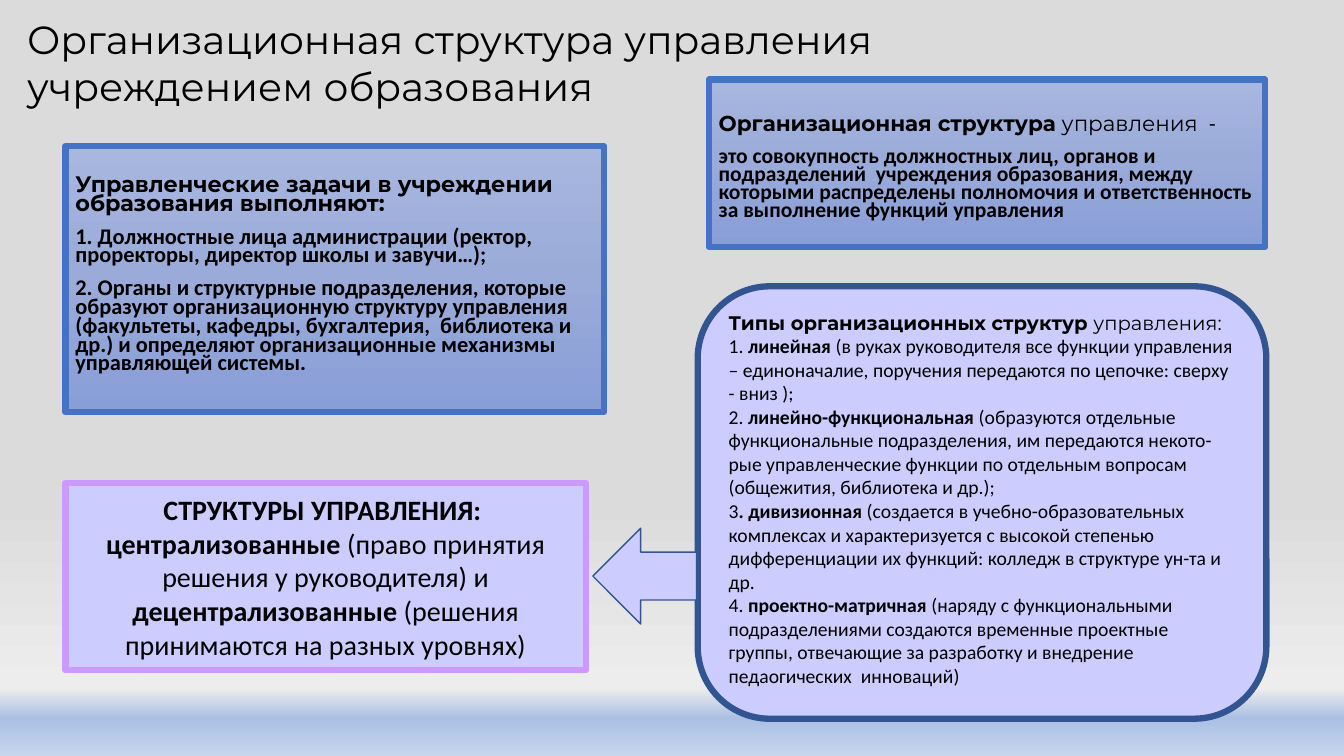
from dataclasses import dataclass
from typing import NamedTuple, Optional

from pptx import Presentation
from pptx.dml.color import RGBColor
from pptx.dml.fill import FillFormat
from pptx.enum.shapes import MSO_SHAPE as Preset
from pptx.enum.text import MSO_ANCHOR as Anchor, PP_ALIGN as Align
from pptx.oxml import parse_xml
from pptx.oxml.ns import nsdecls, qn
from pptx.oxml.xmlchemy import BaseOxmlElement as Element
from pptx.slide import Slide
from pptx.text.text import TextFrame
from pptx.util import Emu, Pt

EMU_PER_PX = 9144
HEADING_FONT = "Montserrat"
BODY_FONT = "Calibri"

BLACK = RGBColor(0x00, 0x00, 0x00)
BLUE = RGBColor(0x44, 0x72, 0xC4)
NAVY = RGBColor(0x32, 0x54, 0x91)
LAVENDER = RGBColor(0xCC, 0xCC, 0xFF)
VIOLET = RGBColor(0xCC, 0x99, 0xFF)


class Stop(NamedTuple):
    percent: int
    color: RGBColor


class Run(NamedTuple):
    text: str
    bold: bool = False
    font: str = BODY_FONT


class Box(NamedTuple):
    left: int
    top: int
    width: int
    height: int

    def emu(self) -> list[Emu]:
        return [Emu(value * EMU_PER_PX) for value in self]


@dataclass(frozen=True)
class TextStyle:
    size: float
    anchor: Anchor = Anchor.MIDDLE
    align: Align = Align.LEFT
    line_spacing: float = 1.0
    space_before: int = 0
    inset_top: int = 5
    inset_bottom: int = 5


@dataclass(frozen=True)
class Panel:
    box: Box
    preset: Preset
    line: RGBColor
    line_width: float = 4.5
    stops: tuple[Stop, ...] = ()
    style: Optional[TextStyle] = None
    paragraphs: tuple[tuple[Run, ...], ...] = ()


BACKGROUND_STOPS = (
    Stop(66, RGBColor(0xDB, 0xDB, 0xDB)),
    Stop(91, RGBColor(0xED, 0xED, 0xED)),
    Stop(95, RGBColor(0xAB, 0xC0, 0xE4)),
    Stop(100, RGBColor(0xC7, 0xD5, 0xED)),
)
PANEL_STOPS = (
    Stop(0, RGBColor(0xA8, 0xB7, 0xDF)),
    Stop(50, RGBColor(0x9A, 0xAB, 0xD9)),
    Stop(100, RGBColor(0x88, 0x9E, 0xD7)),
)

TITLE_BOX = Box(17, 7, 1236, 109)
TITLE_STYLE = TextStyle(28, line_spacing=0.9)
TITLE = "Организационная структура управления \vучреждением образования"

PANELS = (
    Panel(
        Box(65, 145, 534, 264), Preset.RECTANGLE, BLUE, stops=PANEL_STOPS,
        style=TextStyle(16, Anchor.TOP, line_spacing=0.7, space_before=10, inset_top=31),
        paragraphs=(
            (Run("Управленческие задачи в учреждении образования выполняют:", True, HEADING_FONT),),
            (Run("1. Должностные лица администрации (ректор, проректоры, директор школы и завучи…);", True),),
            (Run("2. Органы и структурные подразделения, которые образуют организационную структуру "
                 "управления (факультеты, кафедры, бухгалтерия,  библиотека и др.) и определяют "
                 "организационные механизмы управляющей системы.", True),),
        ),
    ),
    Panel(
        Box(703, 79, 552, 166), Preset.RECTANGLE, BLUE, stops=PANEL_STOPS,
        style=TextStyle(15.4, Anchor.TOP, line_spacing=0.7, space_before=10, inset_top=37),
        paragraphs=(
            (Run("Организационная структура", True, HEADING_FONT),
             Run(" управления  ", font=HEADING_FONT), Run("-")),
            (Run("это совокупность должностных лиц, органов и подразделений  учреждения образования, "
                 "между которыми распределены полномочия и ответственность за выполнение функций "
                 "управления", True),),
        ),
    ),
    Panel(
        Box(692, 284, 564, 429), Preset.ROUNDED_RECTANGLE, NAVY,
        style=TextStyle(14, inset_bottom=12),
        paragraphs=(
            (Run("Типы организационных структур", True, HEADING_FONT),
             Run(" управления:", font=HEADING_FONT)),
            (Run("1. "), Run("линейная", True),
             Run(" (в руках руководителя все функции управления – единоначалие, поручения "
                 "передаются по цепочке: сверху - вниз );")),
            (Run("2. "), Run("линейно-функциональная", True),
             Run(" (образуются отдельные функциональные подразделения, им передаются некото-рые "
                 "управленческие функции по отдельным вопросам  (общежития, библиотека и др.);")),
            (Run("3"), Run(". дивизионная ", True),
             Run("(создается в учебно-образовательных комплексах и характеризуется с высокой "
                 "степенью дифференциации их функций: колледж в структуре ун-та и др.")),
            (Run("4. "), Run("проектно-матричная ", True),
             Run("(наряду с функциональными подразделениями создаются временные проектные группы, "
                 "отвечающие за разработку и внедрение педаогических  инноваций)")),
        ),
    ),
    Panel(
        Box(65, 479, 516, 186), Preset.RECTANGLE, VIOLET,
        style=TextStyle(20, align=Align.CENTER),
        paragraphs=(
            (Run("СТРУКТУРЫ УПРАВЛЕНИЯ: ", True),),
            (Run("централизованные ", True), Run("(право принятия решения у руководителя) и "),
             Run("децентрализованные ", True), Run("(решения принимаются на разных уровнях)")),
        ),
    ),
    Panel(Box(588, 524, 103, 95), Preset.LEFT_ARROW, NAVY, line_width=1),
)


def apply_gradient(fill: FillFormat, owner: Element, stops: tuple[Stop, ...]) -> None:
    fill.gradient()
    fill.gradient_angle = 270
    stop_list = next(owner.iter(qn("a:gsLst")))
    for default_stop in list(stop_list):
        stop_list.remove(default_stop)
    for stop in stops:
        stop_list.append(parse_xml(
            f'<a:gs {nsdecls("a")} pos="{stop.percent * 1000}">'
            f'<a:srgbClr val="{stop.color}"/></a:gs>'
        ))


def write_text(frame: TextFrame, style: TextStyle, paragraphs: tuple[tuple[Run, ...], ...]) -> None:
    frame.word_wrap = True
    frame.vertical_anchor = style.anchor
    frame.margin_top = Emu(style.inset_top * EMU_PER_PX)
    frame.margin_bottom = Emu(style.inset_bottom * EMU_PER_PX)
    for index, runs in enumerate(paragraphs):
        paragraph = frame.add_paragraph() if index else frame.paragraphs[0]
        paragraph.alignment = style.align
        paragraph.line_spacing = style.line_spacing
        paragraph.space_before = Pt(style.space_before if index else 0)
        for run in runs:
            paragraph.add_run().text = run.text
            font = paragraph.runs[-1].font
            font.name = run.font
            font.size = Pt(style.size)
            font.bold = run.bold
            font.color.rgb = BLACK


def draw_title(slide: Slide) -> None:
    frame = slide.shapes.add_textbox(*TITLE_BOX.emu()).text_frame
    write_text(frame, TITLE_STYLE, ((),))
    frame.text = TITLE
    for run in frame.paragraphs[0].runs:
        run.font.name = HEADING_FONT
        run.font.size = Pt(TITLE_STYLE.size)
        run.font.color.rgb = BLACK


def draw_panel(slide: Slide, panel: Panel) -> None:
    shape = slide.shapes.add_shape(panel.preset, *panel.box.emu())
    shape.shadow.inherit = False
    if panel.stops:
        apply_gradient(shape.fill, shape.element, panel.stops)
    else:
        shape.fill.solid()
        shape.fill.fore_color.rgb = LAVENDER
    shape.line.color.rgb = panel.line
    shape.line.width = Pt(panel.line_width)
    if panel.style:
        write_text(shape.text_frame, panel.style, panel.paragraphs)


def main() -> None:
    presentation = Presentation()
    presentation.slide_width, presentation.slide_height = Box(0, 0, 1333, 750).emu()[2:]
    slide = presentation.slides.add_slide(presentation.slide_layouts[6])
    apply_gradient(slide.background.fill, slide.element, BACKGROUND_STOPS)
    draw_title(slide)
    for panel in PANELS:
        draw_panel(slide, panel)
    presentation.save("out.pptx")


if __name__ == "__main__":
    main()
